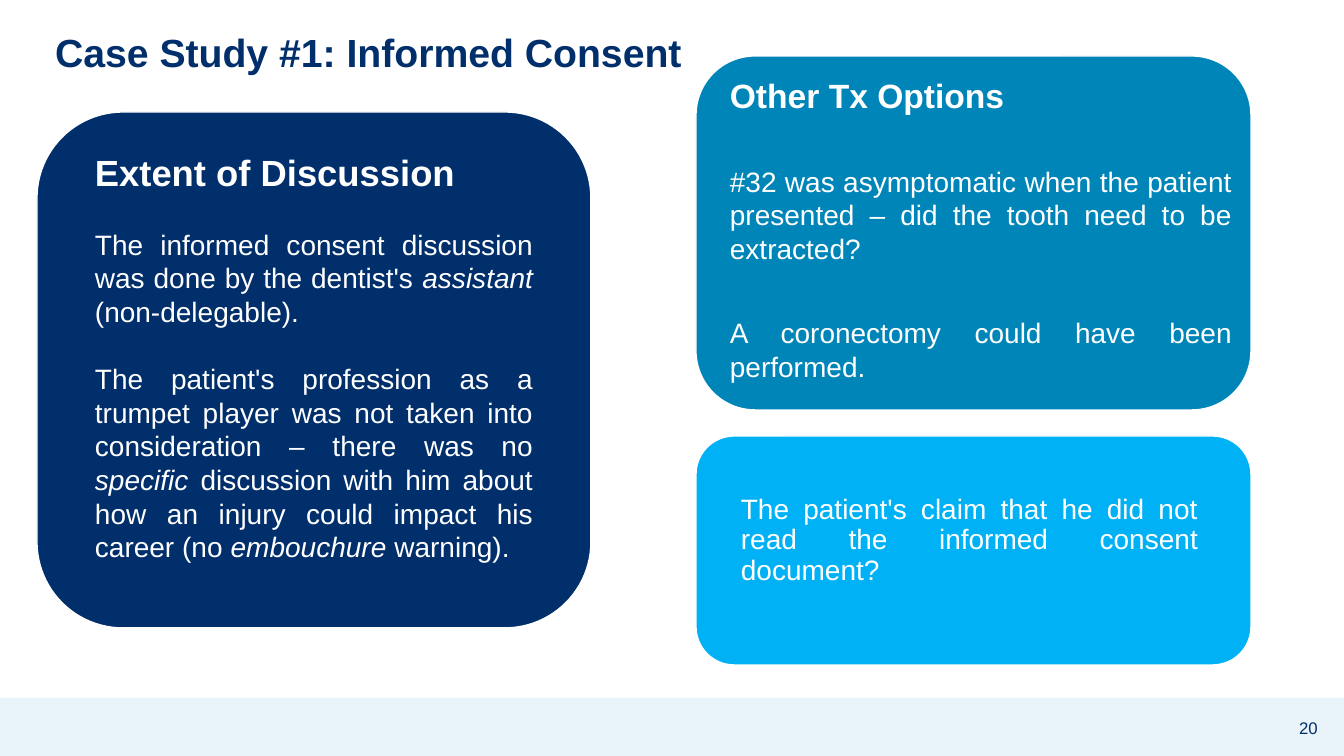
"""Build the informed consent case study slide."""
from dataclasses import dataclass

import pptx
import pptx.dml.color
import pptx.enum.shapes
import pptx.enum.text
import pptx.util

PX_PER_INCH = 100.8
FONT = "Arial"
COLOURS = {
    "navy": "002F6B",
    "teal": "0085B8",
    "sky": "00B2F5",
    "band": "E8F4FA",
    "white": "FFFFFF",
}
ALIGN = pptx.enum.text.PP_ALIGN
ANCHOR = pptx.enum.text.MSO_ANCHOR
SHAPE = pptx.enum.shapes.MSO_SHAPE


@dataclass(frozen=True)
class Area:
    left: int
    top: int
    width: int
    height: int


@dataclass(frozen=True)
class Entry:
    text: str
    size: int = 20
    bold: bool = False
    after: int = 0
    leading: float = 24


@dataclass(frozen=True)
class Card:
    area: Area
    colour: str
    text_area: Area
    entries: tuple[Entry, ...]


CARDS = (
    Card(Area(37, 112, 554, 516), "navy", Area(85, 145, 458, 458), (
        Entry("Extent of Discussion", size=26, bold=True, after=24, leading=31.2),
        Entry("The informed consent discussion was done by the dentist's "
              "*assistant* (non-delegable).", after=24),
        Entry("The patient's profession as a trumpet player was not taken into "
              "consideration – there was no *specific* discussion with him about "
              "how an injury could impact his career (no *embouchure* warning)."),
    )),
    Card(Area(696, 56, 555, 354), "teal", Area(720, 70, 522, 368), (
        Entry("Other Tx Options", size=24, bold=True, after=35, leading=28.8),
        Entry("#32 was asymptomatic when the patient presented – did the tooth "
              "need to be extracted?", after=36),
        Entry("A coronectomy could have been performed."),
    )),
    Card(Area(696, 436, 555, 229), "sky", Area(731, 490, 477, 129), (
        Entry("The patient's claim that he did not read the informed consent "
              "document?", leading=21.6),
    )),
)


def px(length: int) -> pptx.util.Emu:
    """Turn pixels into EMU."""
    return pptx.util.Emu(round(length * 914400 / PX_PER_INCH))


def bounds(area: Area) -> tuple[pptx.util.Emu, ...]:
    """Give the four lengths of an area in EMU."""
    return px(area.left), px(area.top), px(area.width), px(area.height)


def rgb(name: str) -> pptx.dml.color.RGBColor:
    """Look up a named colour."""
    return pptx.dml.color.RGBColor.from_string(COLOURS[name])


def write(para, text: str, *, size: int, colour: str, bold: bool = False,
          align=ALIGN.LEFT, leading=None, after: int = 0) -> None:
    """Fill a paragraph, setting the parts between asterisks in italics."""
    para.alignment = align
    para.line_spacing = leading
    para.space_before = pptx.util.Pt(0)
    para.space_after = pptx.util.Pt(after)
    for index, part in enumerate(text.split("*")):
        span = para.add_run()
        span.text = part
        span.font.name = FONT
        span.font.size = pptx.util.Pt(size)
        span.font.bold = bold
        span.font.italic = index % 2 == 1
        span.font.color.rgb = rgb(colour)


def add_panel(page, kind, area: Area, colour: str, outline: str | None = None) -> None:
    """Draw a filled shape with an optional thin outline."""
    panel = page.shapes.add_shape(kind, *bounds(area))
    panel.shadow.inherit = False
    panel.fill.solid()
    panel.fill.fore_color.rgb = rgb(colour)
    if outline:
        panel.line.color.rgb = rgb(outline)
        panel.line.width = pptx.util.Pt(1)
    else:
        panel.line.fill.background()


def add_box(page, area: Area, anchor=ANCHOR.TOP):
    """Add a wrapping text box and return its text frame."""
    frame = page.shapes.add_textbox(*bounds(area)).text_frame
    frame.word_wrap = True
    frame.vertical_anchor = anchor
    return frame


def add_title(page, text: str) -> None:
    """Place and format the title placeholder."""
    title = page.shapes.title
    title.left, title.top, title.width, title.height = bounds(Area(45, 15, 1219, 79))
    frame = title.text_frame
    frame.auto_size = pptx.enum.text.MSO_AUTO_SIZE.NONE
    frame.vertical_anchor = ANCHOR.MIDDLE
    write(frame.paragraphs[0], text, size=28, colour="navy", bold=True, leading=0.9)


def add_card(page, card: Card) -> None:
    """Draw a rounded card and its justified text."""
    add_panel(page, SHAPE.ROUNDED_RECTANGLE, card.area, card.colour, "white")
    frame = add_box(page, card.text_area)
    for index, entry in enumerate(card.entries):
        para = frame.add_paragraph() if index else frame.paragraphs[0]
        write(para, entry.text, size=entry.size, colour="white", bold=entry.bold,
              align=ALIGN.JUSTIFY, leading=pptx.util.Pt(entry.leading),
              after=entry.after)


def main() -> None:
    """Build and save the deck."""
    deck = pptx.Presentation()
    deck.slide_width, deck.slide_height = px(1344), px(756)
    page = deck.slides.add_slide(deck.slide_layouts[5])
    add_panel(page, SHAPE.RECTANGLE, Area(0, 698, 1344, 58), "band")
    add_title(page, "Case Study #1: Informed Consent")
    number = add_box(page, Area(1278, 708, 61, 40), ANCHOR.MIDDLE)
    write(number.paragraphs[0], "20", size=12, colour="navy", align=ALIGN.CENTER)
    for card in CARDS:
        add_card(page, card)
    deck.save("out.pptx")


if __name__ == "__main__":
    main()
